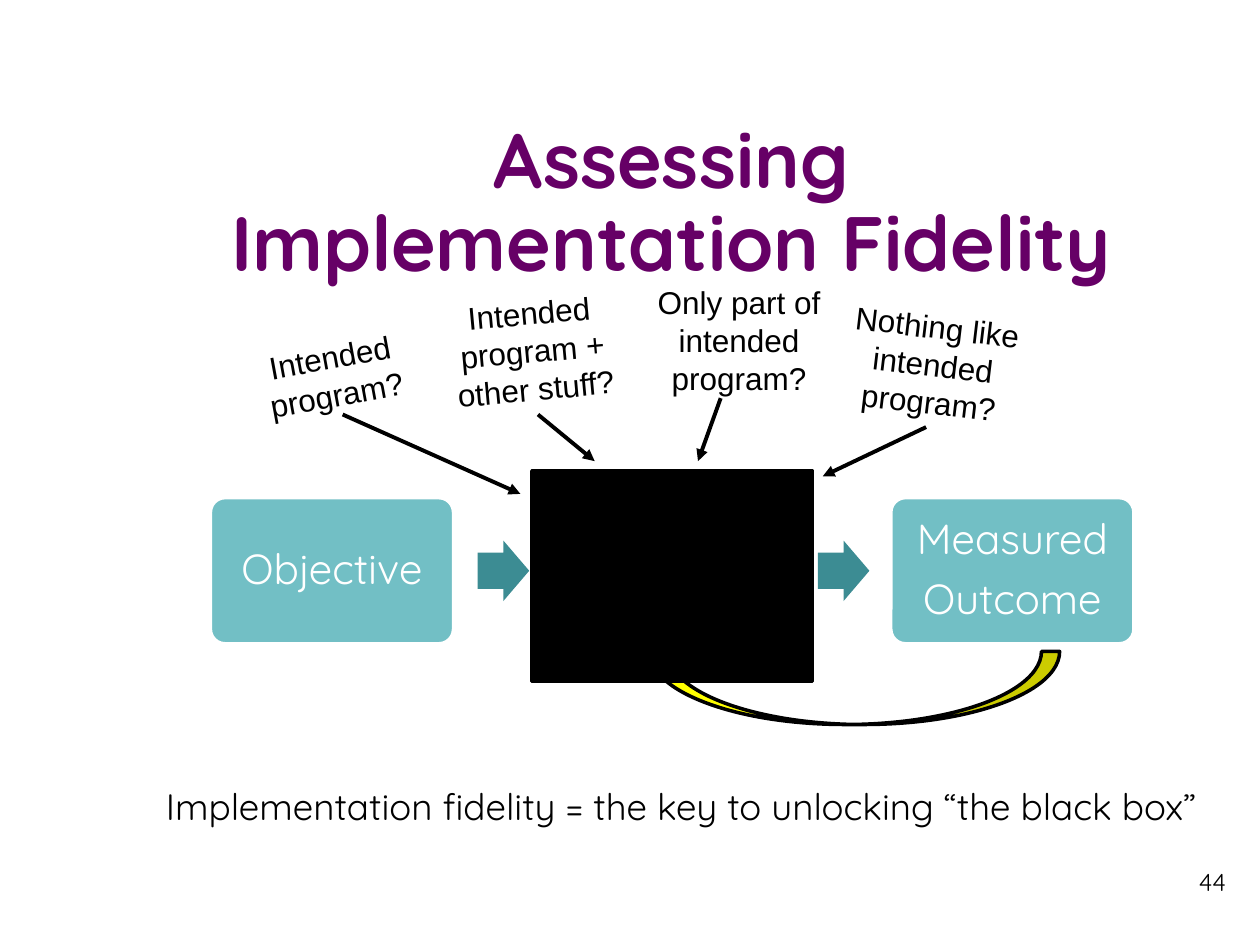
from dataclasses import dataclass

from lxml.etree import SubElement
from pptx import Presentation
from pptx.dml.color import RGBColor
from pptx.enum.shapes import MSO_CONNECTOR, MSO_SHAPE
from pptx.enum.text import MSO_ANCHOR, MSO_AUTO_SIZE, PP_ALIGN
from pptx.oxml.ns import qn
from pptx.util import Inches, Pt

PURPLE = RGBColor(0x66, 0x00, 0x66)
TEAL = RGBColor(0x72, 0xBF, 0xC5)
DARK_TEAL = RGBColor(0x3C, 0x8C, 0x93)
YELLOW = RGBColor(0xFF, 0xFF, 0x00)
BLACK = RGBColor(0x00, 0x00, 0x00)
WHITE = RGBColor(0xFF, 0xFF, 0xFF)
BRAND_FONT = "Quicksand"
LABEL_FONT = "Arial"

LABEL_WIDTH = 1.75
STAGE_TOP, STAGE_WIDTH, STAGE_HEIGHT = 3.95, 1.93, 1.16


@dataclass(frozen=True)
class Scenario:
    text: str
    left: float
    top: float
    height: float
    rotation: float
    arrow_start: tuple[float, float]
    arrow_end: tuple[float, float]


@dataclass(frozen=True)
class Stage:
    lines: tuple[str, ...]
    left: float


SCENARIOS = (
    Scenario("Intended program?", 1.77, 2.63, 0.71, 349.5, (2.72, 3.29), (4.13, 3.92)),
    Scenario("Intended program + other stuff?", 3.35, 2.28, 1.01, 354.7, (4.27, 3.29), (4.72, 3.66)),
    Scenario("Only part of intended program?", 4.99, 2.2, 1.01, 0, (5.72, 3.16), (5.54, 3.66)),
    Scenario("Nothing like intended program?", 6.53, 2.39, 1.01, 6.8, (7.35, 3.39), (6.53, 3.78)),
)
STAGES = (Stage(("Objective",), 1.67), Stage(("Measured", "Outcome"), 7.07))
STEP_ARROW_LEFTS = (3.79, 6.49)


def write(frame, lines: tuple[str, ...], size: float, color: RGBColor, font: str = BRAND_FONT,
          align=PP_ALIGN.CENTER, bold: bool = False, spacing: float = 1.0, gap: float = 0) -> None:
    """Fill a text frame with one formatted paragraph per line."""
    frame.word_wrap = True
    paragraph_format = {"alignment": align, "line_spacing": spacing,
                        "space_before": Pt(0), "space_after": Pt(gap)}
    font_format = {"name": font, "size": Pt(size), "bold": bold}
    for index, line in enumerate(lines):
        para = frame.paragraphs[0] if index == 0 else frame.add_paragraph()
        para.text = line
        for name, value in paragraph_format.items():
            setattr(para, name, value)
        for span in para.runs:
            for name, value in font_format.items():
                setattr(span.font, name, value)
            span.font.color.rgb = color


def add_text(page, bounds: tuple[float, ...], text: str, size: float, **options):
    box = page.shapes.add_textbox(*map(Inches, bounds))
    write(box.text_frame, (text,), size, BLACK, **options)
    return box


def add_block(page, kind, bounds: tuple[float, ...], fill: RGBColor, line: RGBColor | None = None,
              adjustments: tuple[float, ...] = ()):
    block = page.shapes.add_shape(kind, *map(Inches, bounds))
    block.shadow.inherit = False
    block.fill.solid()
    block.fill.fore_color.rgb = fill
    if line is None:
        block.line.fill.background()
    else:
        block.line.color.rgb = line
        block.line.width = Pt(2)
    for index, value in enumerate(adjustments):
        block.adjustments[index] = value
    return block


def add_arrow(page, start: tuple[float, float], end: tuple[float, float]) -> None:
    arrow = page.shapes.add_connector(MSO_CONNECTOR.STRAIGHT, *map(Inches, start + end))
    arrow.line.color.rgb = BLACK
    arrow.line.width = Pt(2.25)
    SubElement(arrow.line._get_or_add_ln(), qn("a:tailEnd"), type="triangle")
    SubElement(arrow._element.spPr, qn("a:effectLst"))


def add_title(page) -> None:
    title = page.shapes.title
    bounds = {"left": 0.83, "top": 1, "width": 9, "height": 1.25}
    for name, value in bounds.items():
        setattr(title, name, Inches(value))
    frame = title.text_frame
    write(frame, ("Assessing\vImplementation Fidelity",), 44, PURPLE, bold=True, spacing=0.9)
    frame.auto_size = MSO_AUTO_SIZE.NONE
    frame.vertical_anchor = MSO_ANCHOR.MIDDLE


def add_stage(page, stage: Stage) -> None:
    bounds = (stage.left, STAGE_TOP, STAGE_WIDTH, STAGE_HEIGHT)
    block = add_block(page, MSO_SHAPE.ROUNDED_RECTANGLE, bounds, TEAL, WHITE, (0.1,))
    frame = block.text_frame
    for side in ("left", "top", "right", "bottom"):
        setattr(frame, f"margin_{side}", Inches(0.1))
    frame.vertical_anchor = MSO_ANCHOR.MIDDLE
    write(frame, stage.lines, 24, WHITE, spacing=0.9, gap=8.4)


def main() -> None:
    deck = Presentation()
    deck.slide_width, deck.slide_height = Inches(10), Inches(7.5)
    page = deck.slides.add_slide(deck.slide_layouts[5])

    add_title(page)
    for stage in STAGES:
        add_stage(page, stage)
    for left in STEP_ARROW_LEFTS:
        add_block(page, MSO_SHAPE.RIGHT_ARROW, (left, 4.29, 0.41, 0.48), DARK_TEAL,
                  adjustments=(0.6, 0.5))

    feedback = add_block(page, MSO_SHAPE.CURVED_DOWN_ARROW, (5.08, 5.17, 3.33, 0.58), YELLOW, BLACK)
    feedback.rotation = 180
    add_block(page, MSO_SHAPE.RECTANGLE, (4.22, 3.74, 2.23, 1.67), BLACK, BLACK)

    for scenario in SCENARIOS:
        bounds = (scenario.left, scenario.top, LABEL_WIDTH, scenario.height)
        label = add_text(page, bounds, scenario.text, 18, font=LABEL_FONT)
        label.rotation = scenario.rotation
        add_arrow(page, scenario.arrow_start, scenario.arrow_end)

    add_text(page, (0.84, 6.21, 9.13, 0.42),
             "Implementation fidelity = the key to unlocking “the black box”", 21, spacing=0.9)
    add_text(page, (7.5, 6.83, 2.33, 0.52), "44", 14, align=PP_ALIGN.RIGHT)
    deck.save("out.pptx")


if __name__ == "__main__":
    main()
